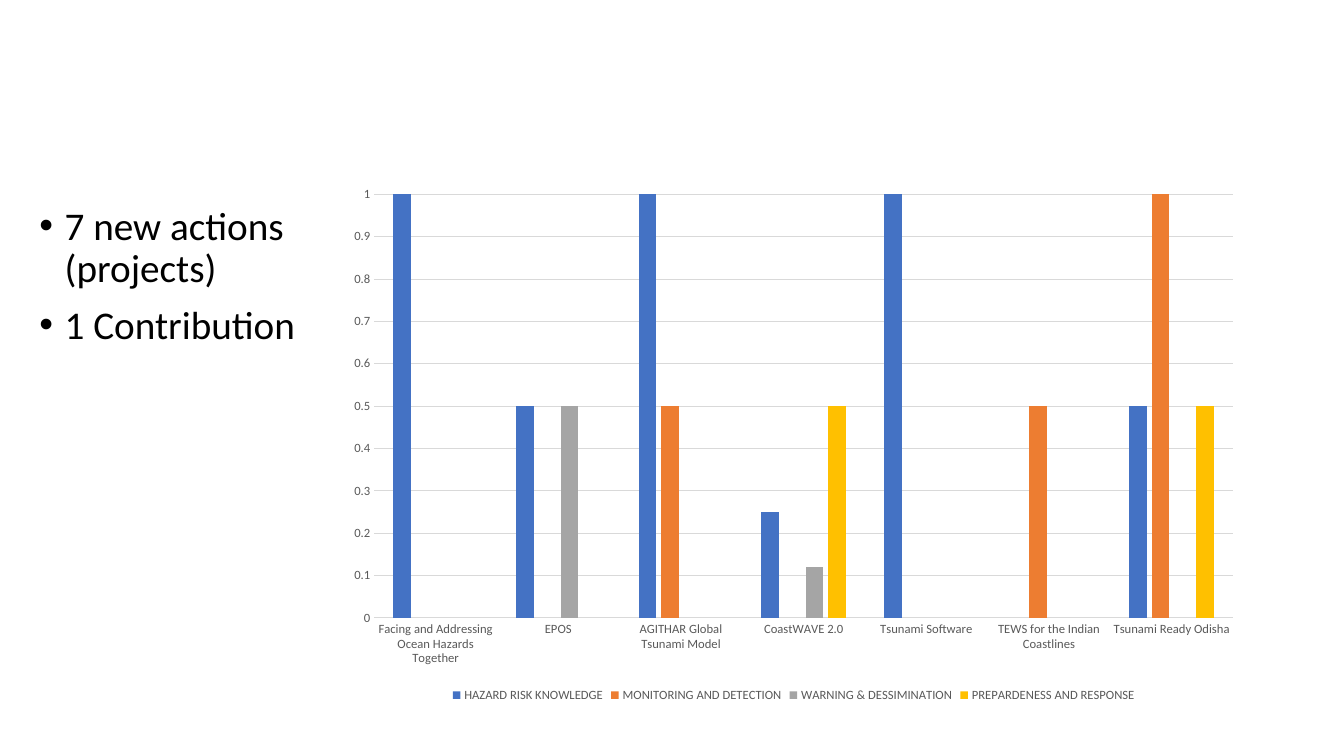
from pptx import Presentation
from pptx import util as u
from pptx.chart.data import CategoryChartData
from pptx.dml.color import RGBColor
from pptx.enum import chart as ch, text as tx
from pptx.oxml import parse_xml
from pptx.oxml.ns import nsdecls

FONT = "Calibri"
COLORS = {
    "text": "000000",
    "label": "595959",
    "grid": "D9D9D9",
    "hazard": "4472C4",
    "monitoring": "ED7D31",
    "warning": "A5A5A5",
    "response": "FFC000",
}
ACTIONS = ["7 new actions (projects)", "1 Contribution"]
PROJECTS = [
    "Facing and Addressing Ocean Hazards Together",
    "EPOS",
    "AGITHAR Global Tsunami Model",
    "CoastWAVE 2.0",
    "Tsunami Software",
    "TEWS for the Indian Coastlines",
    "Tsunami Ready Odisha",
]
SERIES = [
    ("HAZARD RISK KNOWLEDGE", "hazard", [1, 0.5, 1, 0.25, 1, None, 0.5]),
    ("MONITORING AND DETECTION", "monitoring", [None, None, 0.5, None, None, 0.5, 1]),
    ("WARNING & DESSIMINATION", "warning", [None, 0.5, None, 0.12, None, None, None]),
    ("PREPARDENESS AND RESPONSE", "response", [None, None, None, 0.5, None, None, 0.5]),
]


def color(name):
    return RGBColor.from_string(COLORS[name])


def style_font(font, size, name):
    font.name = FONT
    font.size = u.Pt(size)
    font.color.rgb = color(name)


def style_line(line):
    line.color.rgb = color("grid")
    line.width = u.Pt(0.75)


def add_bullets(box, lines):
    box.left, box.top, box.width, box.height = map(u.Pt, (21, 144, 212.5, 342.5))
    frame = box.text_frame
    frame.word_wrap = True
    frame.auto_size = tx.MSO_AUTO_SIZE.NONE
    frame.vertical_anchor = tx.MSO_ANCHOR.TOP
    frame.text = "\n".join(lines)
    for para in frame.paragraphs:
        style_font(para.font, 28, "text")
        para.alignment = tx.PP_ALIGN.LEFT
        para.line_spacing = 0.9
        para.space_before = u.Pt(10)
        properties = para._p.get_or_add_pPr()
        properties.set("marL", str(u.Pt(18)))
        properties.set("indent", str(-u.Pt(18)))
        for tag, value in (("buFont", 'typeface="Arial"'), ("buChar", 'char="•"')):
            bullet = parse_xml(f"<a:{tag} {nsdecls('a')} {value}/>")
            properties.insert_element_before(bullet, "a:tabLst", "a:defRPr", "a:extLst")


def style_axis(axis):
    axis.major_tick_mark = axis.minor_tick_mark = ch.XL_TICK_MARK.NONE
    style_font(axis.tick_labels.font, 9, "label")


def add_projects_chart(page):
    data = CategoryChartData()
    data.categories = PROJECTS
    for name, _, values in SERIES:
        data.add_series(name, values)
    place = map(u.Pt, (240, 126, 653.75, 378.75))
    chart = page.shapes.add_chart(
        ch.XL_CHART_TYPE.COLUMN_CLUSTERED, *place, data
    ).chart
    style_font(chart.font, 10, "text")
    chart.has_title = False

    plot = chart.plots[0]
    plot.gap_width = 219
    plot.overlap = -27
    plot.vary_by_categories = False
    for series, (_, name, _) in zip(plot.series, SERIES):
        series.invert_if_negative = False
        series.format.fill.solid()
        series.format.fill.fore_color.rgb = color(name)

    style_axis(chart.category_axis)
    style_line(chart.category_axis.format.line)
    values = chart.value_axis
    style_axis(values)
    values.minimum_scale, values.maximum_scale = 0, 1
    values.major_unit = 0.1
    values.format.line.fill.background()
    values.has_major_gridlines = True
    style_line(values.major_gridlines.format.line)

    chart.has_legend = True
    chart.legend.position = ch.XL_LEGEND_POSITION.BOTTOM
    chart.legend.include_in_layout = False
    style_font(chart.legend.font, 9, "label")


def main():
    deck = Presentation()
    deck.slide_width, deck.slide_height = u.Pt(960), u.Pt(540)
    page = deck.slides.add_slide(deck.slide_layouts[1])
    title = page.shapes.title.element
    title.getparent().remove(title)
    add_bullets(page.placeholders[1], ACTIONS)
    add_projects_chart(page)
    deck.save("out.pptx")


if __name__ == "__main__":
    main()
